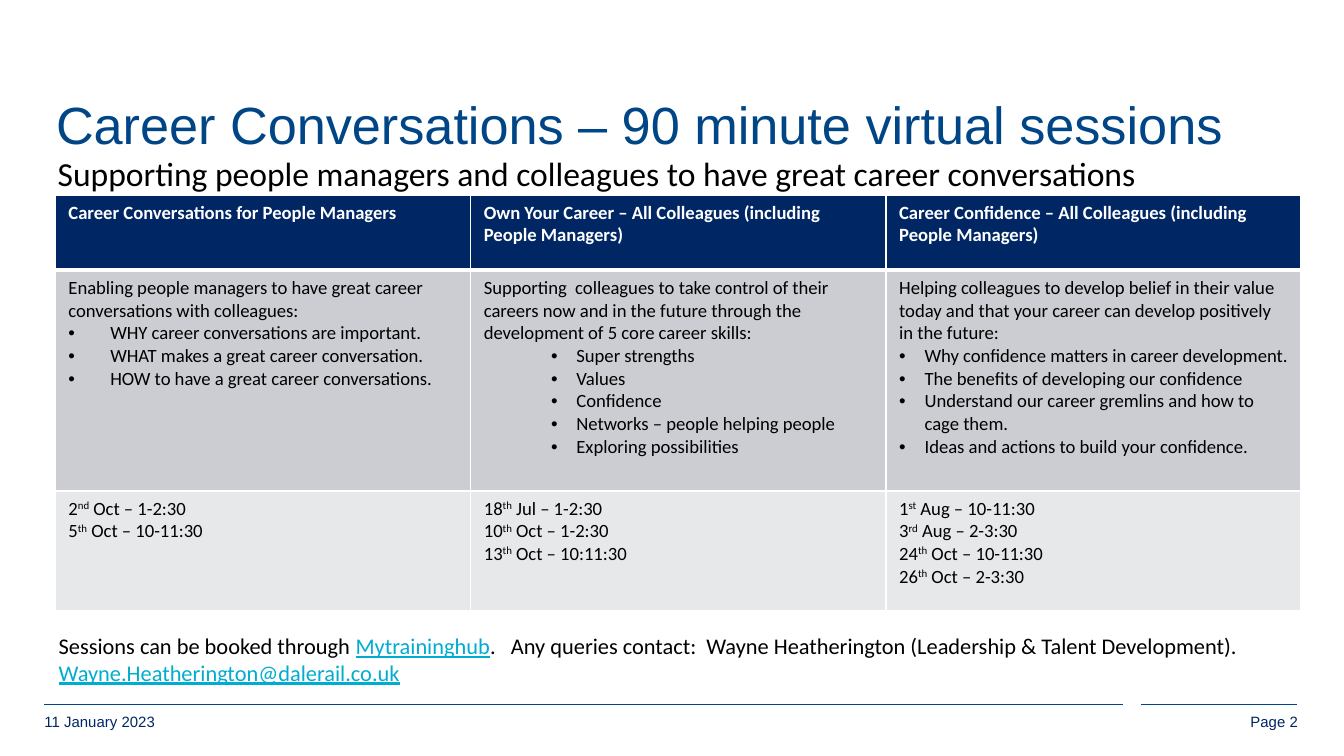
from lxml.etree import SubElement
from pptx import Presentation
from pptx.dml.color import RGBColor
from pptx.enum.shapes import MSO_CONNECTOR as Connector
from pptx.enum.text import MSO_ANCHOR as Anchor, PP_ALIGN as Align
from pptx.oxml.ns import qn
from pptx.util import Cm, Pt

COLORS = {
    "title": "004687", "navy": "002664", "text": "000000", "white": "FFFFFF",
    "link": "00ADD0", "topics": "CCCDD3", "dates": "E7E8EA",
}
HEADINGS = [
    "Career Conversations for People Managers",
    "Own Your Career – All Colleagues (including People Managers)",
    "Career Confidence – All Colleagues (including People Managers)",
]
TOPICS = [
    ["Enabling people managers to have great career conversations with colleagues:",
     "WHY career conversations are important.",
     "WHAT makes a great career conversation.",
     "HOW to have a great career conversations."],
    ["Supporting  colleagues to take control of their careers now and in the future "
     "through the development of 5 core career skills:",
     "Super strengths", "Values", "Confidence",
     "Networks – people helping people", "Exploring possibilities"],
    ["Helping colleagues to develop belief in their value today and that your career "
     "can develop positively in the future:",
     "Why confidence matters in career development.",
     "The benefits of developing our confidence",
     "Understand our career gremlins and how to cage them.",
     "Ideas and actions to build your confidence."],
]
BULLETS = [(0.79, 0.79, 0), (1.75, 0.48, 1), (0.48, 0.48, 0)]
DATES = [
    ["2|nd| Oct – 1-2:30", "5|th| Oct – 10-11:30"],
    ["18|th| Jul – 1-2:30", "10|th| Oct – 1-2:30", "13|th| Oct – 10:11:30"],
    ["1|st| Aug – 10-11:30", "3|rd| Aug – 2-3:30",
     "24|th| Oct – 10-11:30", "26|th| Oct – 2-3:30"],
]
BOOKING = ("Sessions can be booked through |Mytraininghub|.   Any queries contact:  "
           "Wayne Heatherington (Leadership & Talent Development).  "
           "|Wayne.Heatherington@dalerail.co.uk|  ")


def rgb(name):
    return RGBColor.from_string(COLORS[name])


def superscript(run):
    run._r.get_or_add_rPr().set("baseline", "30000")


def link_style(run):
    run.font.underline = True
    run.font.color.rgb = rgb("link")


class SlideBuilder:
    def __init__(self, slide, body_font="Calibri", heading_font="Arial"):
        self.slide = slide
        self.body_font = body_font
        self.heading_font = heading_font

    def fill_paragraph(self, paragraph, text, size, color="text", font=None, bold=False,
                       accent=None):
        paragraph.font.size = Pt(size)
        paragraph.font.name = font or self.body_font
        paragraph.font.bold = bold
        paragraph.font.color.rgb = rgb(color)
        for index, part in enumerate(text.split("|")):
            run = paragraph.add_run()
            run.text = part
            if index % 2:
                accent(run)

    def bullet(self, paragraph, margin, hanging, level):
        paragraph.level = level
        properties = paragraph._p.get_or_add_pPr()
        properties.set("marL", str(Cm(margin)))
        properties.set("indent", str(-Cm(hanging)))
        SubElement(properties, qn("a:buFont"), typeface="Arial")
        SubElement(properties, qn("a:buChar"), char="•")

    def text(self, left, top, width, height, text, size, side=None, align=Align.LEFT,
             anchor=Anchor.TOP, spacing=None, **style):
        shape = self.slide.shapes.add_textbox(Cm(left), Cm(top), Cm(width), Cm(height))
        frame = shape.text_frame
        frame.word_wrap = True
        frame.vertical_anchor = anchor
        if side is not None:
            frame.margin_left = frame.margin_right = Cm(side)
        paragraph = frame.paragraphs[0]
        paragraph.alignment = align
        paragraph.line_spacing = spacing
        self.fill_paragraph(paragraph, text, size, **style)

    def line(self, start, end, y):
        connector = self.slide.shapes.add_connector(
            Connector.STRAIGHT, Cm(start), Cm(y), Cm(end), Cm(y))
        connector.line.color.rgb = rgb("title")
        connector.line.width = Pt(0.25)
        SubElement(connector._element.spPr, qn("a:effectLst"))

    def borders(self, cell, top, bottom):
        properties = cell._tc.get_or_add_tcPr()
        widths = {"a:lnL": 1, "a:lnR": 1, "a:lnT": top, "a:lnB": bottom}
        for position, (tag, width) in enumerate(widths.items()):
            border = SubElement(properties, qn(tag), w=str(Pt(width)))
            fill = SubElement(border, qn("a:solidFill"))
            SubElement(fill, qn("a:srgbClr"), val=COLORS["white"])
            properties.insert(position, border)

    def cell(self, cell, fill, lines, bullet=None, **style):
        cell.fill.solid()
        cell.fill.fore_color.rgb = rgb(fill)
        frame = cell.text_frame
        for index, text in enumerate(lines):
            paragraph = frame.add_paragraph() if index else frame.paragraphs[0]
            if bullet and index:
                self.bullet(paragraph, *bullet)
            self.fill_paragraph(paragraph, text, 10, accent=superscript, **style)

    def sessions_table(self, left, top, column_width, row_heights):
        table = self.slide.shapes.add_table(
            len(row_heights), len(HEADINGS), Cm(left), Cm(top),
            Cm(column_width * len(HEADINGS)), Cm(sum(row_heights))).table
        for row, height in zip(table.rows, row_heights):
            row.height = Cm(height)
        for index, column in enumerate(table.columns):
            column.width = Cm(column_width)
            heading, topics, dates = (table.cell(row, index) for row in range(3))
            self.cell(heading, "navy", [HEADINGS[index]], color="white", bold=True)
            self.cell(topics, "topics", TOPICS[index], BULLETS[index])
            self.cell(dates, "dates", DATES[index])
            self.borders(heading, 1, 3)
            self.borders(topics, 3, 1)
            self.borders(dates, 1, 1)


def main():
    presentation = Presentation()
    presentation.slide_width = Cm(25.4)
    presentation.slide_height = Cm(14.28)
    slide = presentation.slides.add_slide(presentation.slide_layouts[6])
    builder = SlideBuilder(slide)
    arial = builder.heading_font

    builder.line(0.84, 21.23, 13.31)
    builder.line(21.56, 24.51, 13.31)
    builder.text(0.86, 1.9, 23.7, 1.12, "Career Conversations – 90 minute virtual sessions",
                 28, side=0.2, anchor=Anchor.BOTTOM, spacing=0.7, color="title", font=arial)
    builder.text(0.84, 13.34, 2.67, 0.76, "11 January 2023", 8, side=0,
                 color="navy", font=arial)
    builder.text(23.06, 13.34, 1.47, 0.76, "Page 2", 8, side=0, align=Align.RIGHT,
                 color="navy", font=arial)
    builder.text(0.84, 2.77, 23.24, 1.02,
                 "Supporting people managers and colleagues to have great career conversations", 18)
    builder.sessions_table(1.04, 3.68, 7.85, [1.42, 4.17, 2.26])
    builder.text(0.86, 11.81, 23.55, 1.27, BOOKING, 12, accent=link_style)
    presentation.save("out.pptx")


if __name__ == "__main__":
    main()
